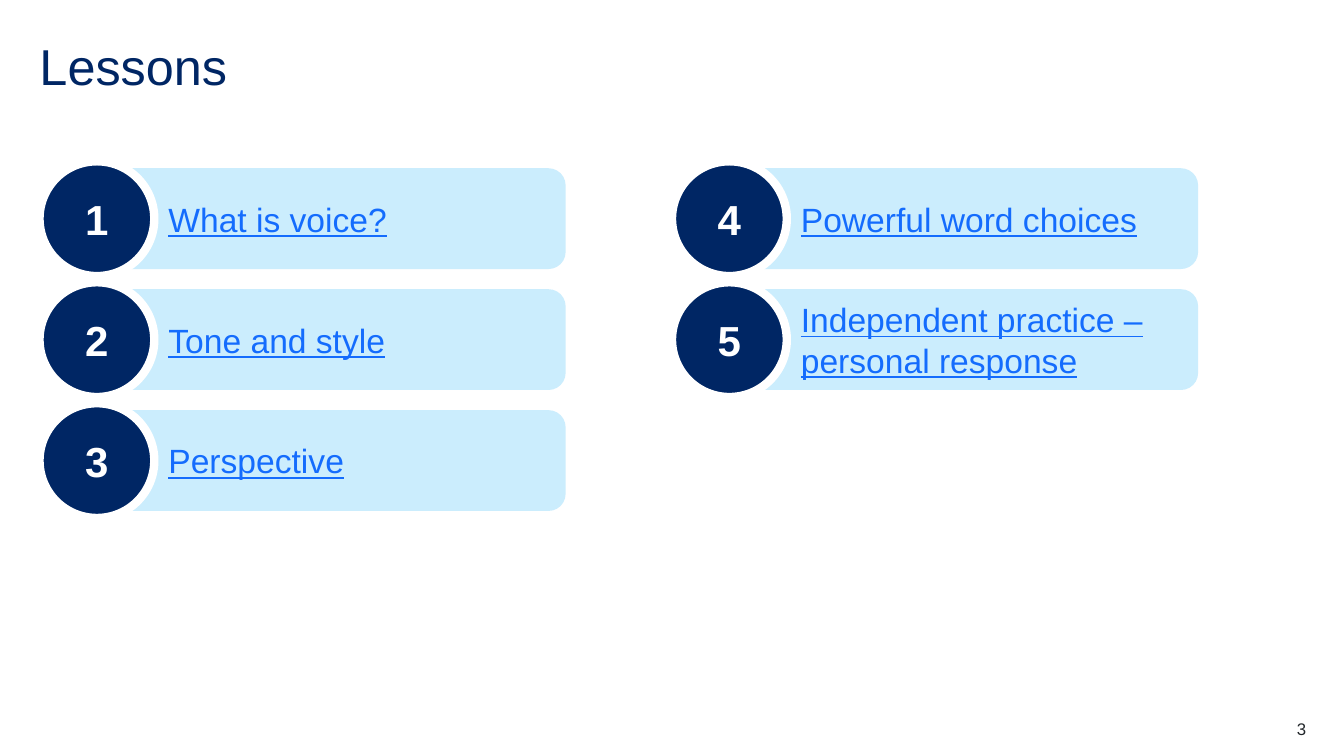
from dataclasses import dataclass

from pptx import Presentation
from pptx.dml.color import RGBColor
from pptx.enum.shapes import MSO_SHAPE
from pptx.enum.text import MSO_ANCHOR, PP_ALIGN
from pptx.util import Pt


@dataclass(frozen=True)
class Theme:
    font: str = "Arial"
    navy: str = "002664"
    sky: str = "CBEDFD"
    link: str = "146CFD"
    white: str = "FFFFFF"
    ink: str = "22272B"
    title_size: int = 36
    number_size: int = 30
    lesson_size: int = 24
    page_size: int = 12


theme = Theme()


def write(shape, text, size, color, align=PP_ALIGN.LEFT, margin=None):
    """Put one vertically centred paragraph in a shape and return the paragraph."""
    frame = shape.text_frame
    frame.text = text
    frame.word_wrap = True
    frame.vertical_anchor = MSO_ANCHOR.MIDDLE
    if margin is not None:
        frame.margin_left = frame.margin_right = Pt(margin)
        frame.margin_top = frame.margin_bottom = Pt(margin)
    paragraph = frame.paragraphs[0]
    paragraph.alignment = align
    font = paragraph.runs[0].font
    font.name = theme.font
    font.size = Pt(size)
    font.color.rgb = RGBColor.from_string(color)
    return paragraph


def add_filled(shapes, kind, left, top, width, height, color):
    shape = shapes.add_shape(kind, Pt(left), Pt(top), Pt(width), Pt(height))
    shape.shadow.inherit = False
    shape.fill.solid()
    shape.fill.fore_color.rgb = RGBColor.from_string(color)
    shape.line.fill.background()
    return shape


presentation = Presentation()
presentation.slide_width = Pt(960)
presentation.slide_height = Pt(540)
slide = presentation.slides.add_slide(presentation.slide_layouts[6])

# Title
title = slide.shapes.add_textbox(Pt(28.2), Pt(28.2), Pt(904), Pt(43.2))
title_paragraph = write(title, "Lessons", theme.title_size, theme.navy, margin=0)
title_paragraph.line_spacing = 0.9

# Lessons, filling the columns from top to bottom
lessons = [
    "What is voice?",
    "Tone and style",
    "Perspective",
    "Powerful word choices",
    "Independent practice – personal response",
]
rows_per_column = 3
first_left, first_top = 28.2, 115.2
column_step, row_step = 451.8, 86.4
circle_size = 82
bar_offset_left, bar_offset_top = 53.2, 5
bar_width, bar_height = 322.6, 72

for index, lesson in enumerate(lessons):
    column, row = divmod(index, rows_per_column)
    left = first_left + column * column_step
    top = first_top + row * row_step
    group = slide.shapes.add_group_shape()

    bar = add_filled(group.shapes, MSO_SHAPE.ROUNDED_RECTANGLE,
                     left + bar_offset_left, top + bar_offset_top,
                     bar_width, bar_height, theme.sky)
    bar.adjustments[0] = 0.17
    paragraph = write(bar, lesson, theme.lesson_size, theme.link)
    paragraph.runs[0].font.underline = True
    properties = paragraph._p.get_or_add_pPr()
    properties.set("marL", str(Pt(28.2)))
    properties.set("indent", "0")

    circle = add_filled(group.shapes, MSO_SHAPE.OVAL, left, top,
                        circle_size, circle_size, theme.navy)
    circle.line.color.rgb = RGBColor.from_string(theme.white)
    circle.line.width = Pt(6)
    paragraph = write(circle, str(index + 1), theme.number_size, theme.white,
                      PP_ALIGN.CENTER)
    paragraph.runs[0].font.bold = True

# Page number
page_number = slide.shapes.add_textbox(Pt(876), Pt(513.4), Pt(57), Pt(14.4))
write(page_number, "3", theme.page_size, theme.ink, PP_ALIGN.RIGHT, margin=0)

presentation.save("out.pptx")
